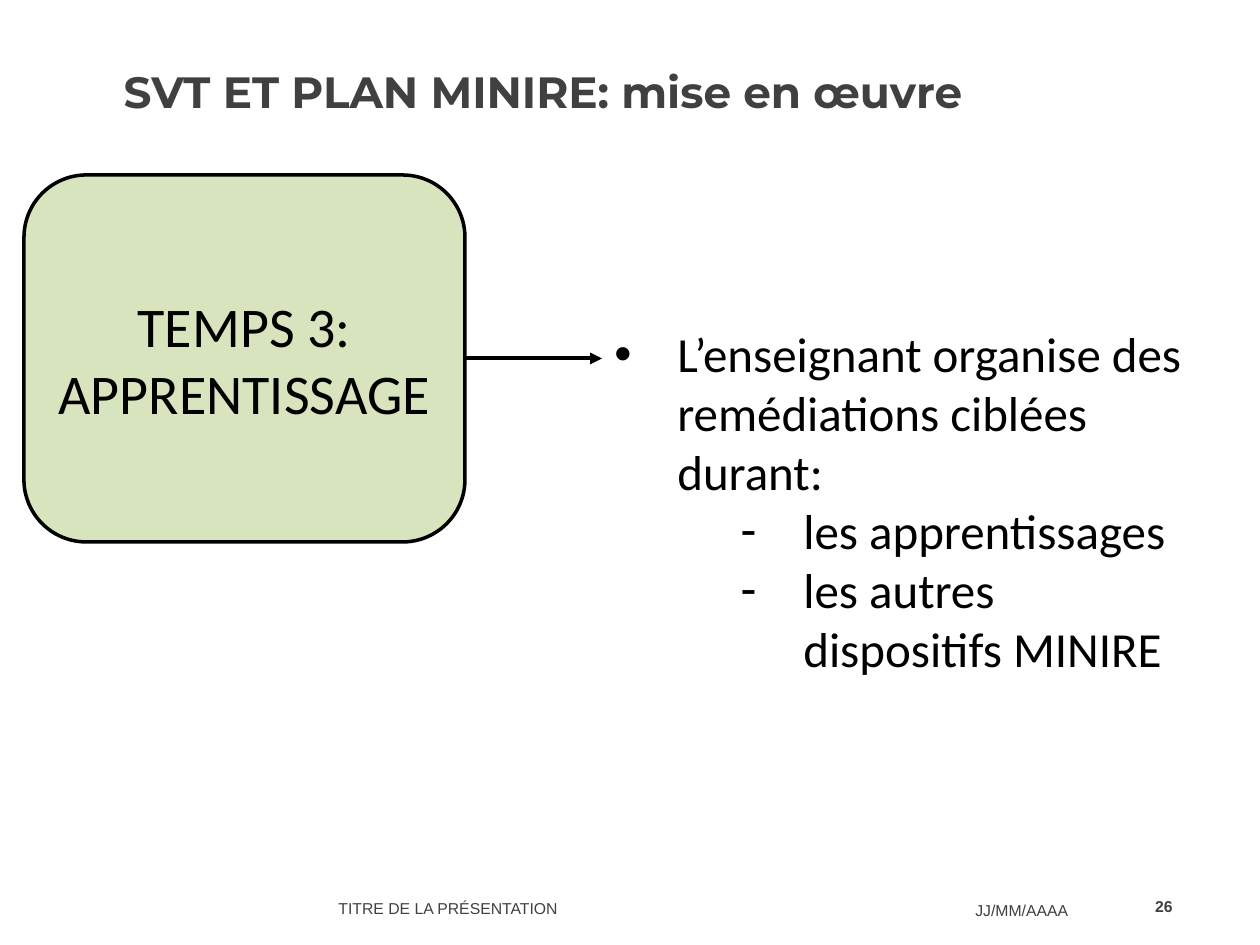
from lxml import etree
from pptx import Presentation
from pptx.dml.color import RGBColor
from pptx.enum.shapes import MSO_CONNECTOR, MSO_SHAPE
from pptx.enum.text import MSO_ANCHOR, MSO_AUTO_SIZE, PP_ALIGN
from pptx.oxml.ns import qn
from pptx.util import Pt

PX = 914400 // 126
BLACK = RGBColor(0x00, 0x00, 0x00)
GREY = RGBColor(0x40, 0x40, 0x40)
GREEN = RGBColor(0xD7, 0xE4, 0xBD)
LEFT, CENTER, RIGHT = PP_ALIGN.LEFT, PP_ALIGN.CENTER, PP_ALIGN.RIGHT
MIDDLE, TOP = MSO_ANCHOR.MIDDLE, MSO_ANCHOR.TOP


def px(*values):
    return [v * PX for v in values]


def write(shape, lines, font, align=LEFT, anchor=MIDDLE, margins=(6, 6)):
    """Write (text, level, bullet) lines; margins are top and bottom in px."""
    tf = shape.text_frame
    tf.auto_size = MSO_AUTO_SIZE.NONE
    tf.word_wrap = True
    tf.vertical_anchor = anchor
    tf.margin_top, tf.margin_bottom = px(*margins)
    for i, (text, level, bullet) in enumerate(lines):
        p = tf.add_paragraph() if i else tf.paragraphs[0]
        p.alignment = align
        p.level = level
        if bullet:
            pPr = p._p.get_or_add_pPr()
            pPr.set("marL", str((63 + 63 * level) * PX))
            pPr.set("indent", str(-63 * PX))
            etree.SubElement(pPr, qn("a:buFont"), typeface="Arial")
            etree.SubElement(pPr, qn("a:buChar"), char=bullet)
        r = p.add_run()
        r.text = text
        for name, value in font.items():
            if name == "color":
                r.font.color.rgb = value
            else:
                setattr(r.font, name, value)


prs = Presentation()
prs.slide_width, prs.slide_height = px(1260, 945)
s = prs.slides.add_slide(prs.slide_layouts[5])

# Title
title = s.shapes.title
title.left, title.top, title.width, title.height = px(111, 25, 1086, 178)
write(title, [("SVT ET PLAN MINIRE: mise en œuvre", 0, None)],
      dict(name="Montserrat", size=Pt(25), bold=True, color=GREY), margins=(6, 51))

# Footer
for text, box, align, bold, margin_top in [
    ("TITRE DE LA PRÉSENTATION", (326, 847, 489, 93), LEFT, False, 36),
    ("JJ/MM/AAAA", (963, 881, 160, 50), LEFT, False, 14),
    ("26", (1123, 881, 62, 50), RIGHT, True, 6),
]:
    write(s.shapes.add_textbox(*px(*box)), [(text, 0, None)],
          dict(name="Arial", size=Pt(9), bold=bold, color=GREY),
          align=align, margins=(margin_top, 6))

# Step and its explanation
step = s.shapes.add_shape(MSO_SHAPE.ROUNDED_RECTANGLE, *px(24, 175, 441, 367))
step.adjustments[0] = 0.17
step.shadow.inherit = False
step.fill.solid()
step.fill.fore_color.rgb = GREEN
step.line.color.rgb = BLACK
step.line.width = Pt(2)
write(step, [("TEMPS 3: APPRENTISSAGE", 0, None)],
      dict(name="Calibri", size=Pt(32), color=BLACK), align=CENTER)

write(s.shapes.add_textbox(*px(602, 318, 595, 365)),
      [("L’enseignant organise des remédiations ciblées durant:", 0, "•"),
       ("les apprentissages", 2, "-"),
       ("les autres dispositifs MINIRE", 2, "-")],
      dict(name="Calibri", size=Pt(28), color=BLACK), anchor=TOP)

arrow = s.shapes.add_connector(MSO_CONNECTOR.STRAIGHT, *px(465, 358, 602, 358))
arrow.begin_connect(step, 3)
arrow.end_y = arrow.begin_y
arrow.line.color.rgb = BLACK
arrow.line.width = Pt(2.25)
etree.SubElement(arrow.line._get_or_add_ln(), qn("a:tailEnd"), type="triangle")
etree.SubElement(arrow._element.spPr, qn("a:effectLst"))

prs.save("out.pptx")
